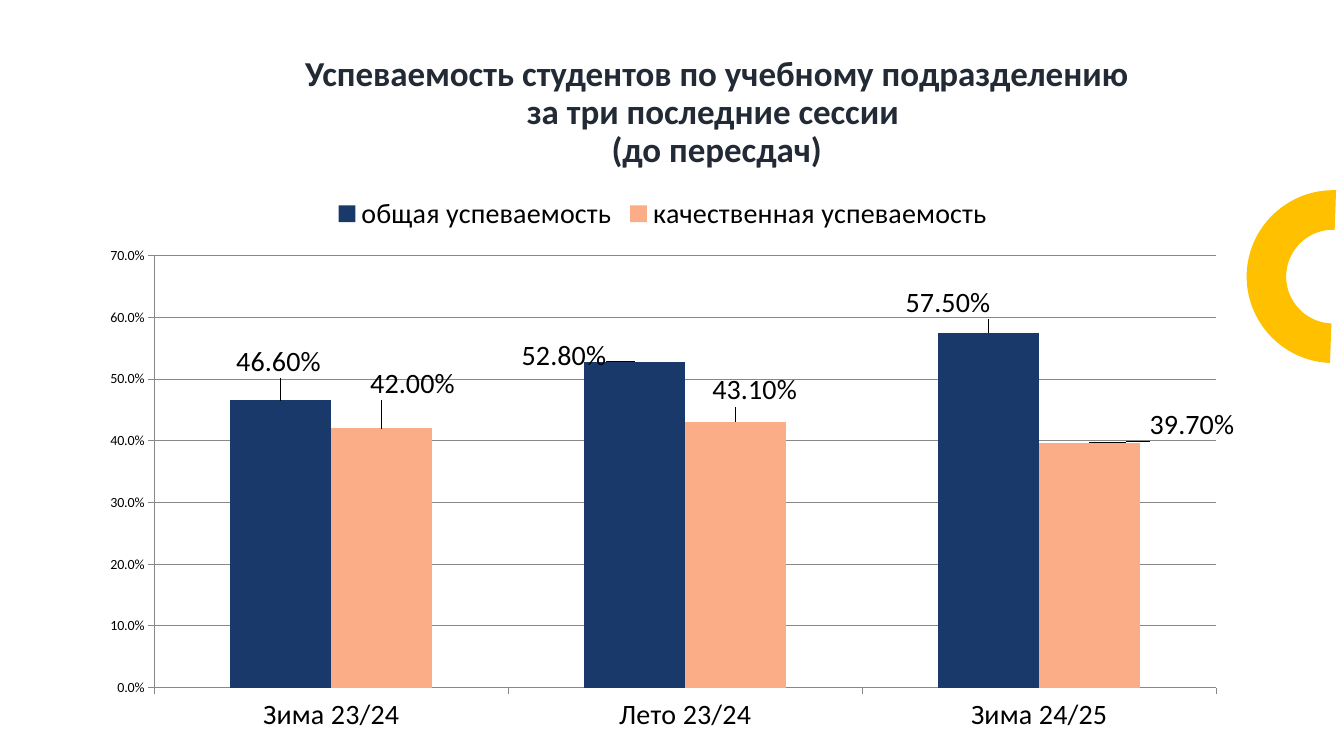
from math import cos, radians, sin

from pptx import Presentation
from pptx.chart.data import CategoryChartData
from pptx.dml.color import RGBColor
from pptx.enum.chart import XL_CHART_TYPE as ChartType
from pptx.enum.chart import XL_LABEL_POSITION as LabelPosition
from pptx.enum.chart import XL_LEGEND_POSITION as LegendPosition
from pptx.enum.chart import XL_TICK_MARK as TickMark
from pptx.enum.text import MSO_ANCHOR as Anchor
from pptx.enum.text import MSO_AUTO_SIZE as AutoSize
from pptx.enum.text import PP_ALIGN as Align
from pptx.oxml import parse_xml
from pptx.oxml.ns import nsdecls, qn
from pptx.util import Pt

FONT = "Calibri"
COLORS = {
    "title": "222A35",
    "text": "000000",
    "axis": "888888",
    "arc": "FFC000",
    "overall": "1A396B",
    "quality": "FBAD87",
}
TITLE = "Успеваемость студентов по учебному подразделению\vза три последние сессии \v(до пересдач)"
SESSIONS = ["Зима 23/24", "Лето 23/24", "Зима 24/25"]
# Name, colour, values, and label shifts in points
SERIES = [
    ("общая успеваемость", "overall", [0.466, 0.528, 0.575],
     [(-1.5, -12.5), (-50.5, 10.5), (-29, -6.5)]),
    ("качественная успеваемость", "quality", [0.42, 0.431, 0.397],
     [(22, -17), (13.5, -7.5), (73, 2)]),
]
CHART_WIDTH, CHART_HEIGHT = 823, 399.6
LEADER_LINES_OFF = (
    f'<c:extLst {nsdecls("c")}><c:ext uri="{{CE6537A1-D6FC-4f65-9D91-7224C49458BB}}"'
    ' xmlns:c15="http://schemas.microsoft.com/office/drawing/2012/chart">'
    '<c15:showLeaderLines val="0"/></c:ext></c:extLst>'
)


def rgb(name):
    return RGBColor.from_string(COLORS[name])


def style_font(font, size, color="text", bold=False):
    font.name = FONT
    font.size = Pt(size)
    font.bold = bold
    font.color.rgb = rgb(color)


def set_title(slide):
    title = slide.shapes.title
    title.left, title.top, title.width, title.height = Pt(53.3), Pt(0), Pt(917.3), Pt(162)
    frame = title.text_frame
    frame.text = TITLE
    frame.word_wrap = True
    frame.auto_size = AutoSize.NONE
    frame.vertical_anchor = Anchor.MIDDLE
    paragraph = frame.paragraphs[0]
    paragraph.alignment = Align.CENTER
    paragraph.line_spacing = 0.9
    for run in paragraph.runs:
        style_font(run.font, 25, "title", bold=True)


def quarter_curve(radius, start, turn):
    """Return the two control points and the end of a quarter circle."""
    u, v = [(cos(radians(a)), -sin(radians(a))) for a in (start, start + turn)]
    weights = [(1, 0.55), (0.55, 1), (0, 1)]
    return [tuple(radius * (p * s + q * t) for s, t in zip(u, v)) for p, q in weights]


def add_half_ring(slide, center_x, center_y, outer, inner, start):
    """Draw half a ring, counter-clockwise from the start angle in degrees."""
    end = start + 180
    corners = [(r * cos(radians(a)), -r * sin(radians(a))) for r, a in ((outer, start), (inner, end))]
    offsets = [
        corners[0], *quarter_curve(outer, start, 90), *quarter_curve(outer, start + 90, 90),
        corners[1], *quarter_curve(inner, end, -90), *quarter_curve(inner, end - 90, -90),
    ]
    points = [(100 * (center_x + x), 100 * (center_y + y)) for x, y in offsets]
    builder = slide.shapes.build_freeform(*points[0], scale=Pt(0.01))
    builder.add_line_segments(points[1:], close=True)
    shape = builder.convert_to_shape()
    segments = shape.element.findall(".//" + qn("a:lnTo"))
    for first in (0, 3, 7, 10):
        curve, *others = segments[first:first + 3]
        for other in others:
            curve.append(other[0])
            other.getparent().remove(other)
        curve.tag = qn("a:cubicBezTo")
    shape.shadow.inherit = False
    shape.fill.solid()
    shape.fill.fore_color.rgb = rgb("arc")
    shape.line.fill.background()


def manual_layout(x, y, size=None):
    """Return a c:layout element from points; a size makes it an inner plot area."""
    parts = [("x", x / CHART_WIDTH), ("y", y / CHART_HEIGHT)]
    if size:
        parts = [("layoutTarget", "inner"), ("xMode", "edge"), ("yMode", "edge"),
                 *parts, ("w", size[0] / CHART_WIDTH), ("h", size[1] / CHART_HEIGHT)]
    body = "".join(f'<c:{tag} val="{value}"/>' for tag, value in parts)
    return parse_xml(
        f'<c:layout {nsdecls("c")}><c:manualLayout>{body}</c:manualLayout></c:layout>'
    )


def style_axis(axis, size):
    style_font(axis.tick_labels.font, size)
    axis.major_tick_mark = TickMark.OUTSIDE
    axis.minor_tick_mark = TickMark.NONE
    style_line(axis.format.line)


def style_line(line):
    line.color.rgb = rgb("axis")
    line.width = Pt(0.75)


def style_series(series, color, shifts):
    series.format.fill.solid()
    series.format.fill.fore_color.rgb = rgb(color)
    labels = series.data_labels
    labels.show_value = True
    labels.number_format = "0.00%"
    labels.number_format_is_linked = False
    labels.position = LabelPosition.OUTSIDE_END
    style_font(labels.font, 20)
    for index in range(len(shifts)):
        label = series.points[index].data_label
        label.position = LabelPosition.OUTSIDE_END
        style_font(label.font, 20)


def place_labels(chart):
    all_shifts = [shift for *_, shifts in SERIES for shift in shifts]
    for label, shift in zip(chart.element.xpath(".//c:dLbl"), all_shifts):
        label.insert(1, manual_layout(*shift))
    for labels in chart.element.xpath(".//c:ser/c:dLbls"):
        for leader_lines in labels.xpath("./c:showLeaderLines"):
            labels.remove(leader_lines)
        labels.append(parse_xml(LEADER_LINES_OFF))


def add_results_chart(slide):
    data = CategoryChartData(number_format="0.00%")
    data.categories = SESSIONS
    for name, _, values, _ in SERIES:
        data.add_series(name, values)
    chart = slide.shapes.add_chart(
        ChartType.COLUMN_CLUSTERED, Pt(61.9), Pt(131), Pt(CHART_WIDTH), Pt(CHART_HEIGHT), data
    ).chart
    style_font(chart.font, 10)
    chart.has_title = False
    chart.has_legend = True
    chart.legend.position = LegendPosition.TOP
    chart.legend.include_in_layout = False
    style_font(chart.legend.font, 20)

    style_axis(chart.category_axis, 20)
    value_axis = chart.value_axis
    style_axis(value_axis, 10)
    value_axis.minimum_scale, value_axis.maximum_scale = 0, 0.7
    value_axis.major_unit = 0.1
    value_axis.tick_labels.number_format = "0.0%"
    value_axis.tick_labels.number_format_is_linked = False
    style_line(value_axis.major_gridlines.format.line)

    plot = chart.plots[0]
    plot.gap_width = 150
    plot.overlap = 0
    plot.vary_by_categories = False
    for series, (_, color, _, shifts) in zip(plot.series, SERIES):
        style_series(series, color, shifts)
    place_labels(chart)

    plot_area = chart.element.xpath(".//c:plotArea")[0]
    for layout in plot_area.xpath("./c:layout"):
        plot_area.remove(layout)
    plot_area.insert(0, manual_layout(48.3, 51.7, (758.6, 308.6)))


def main():
    presentation = Presentation()
    presentation.slide_width, presentation.slide_height = Pt(960), Pt(540)
    slide = presentation.slides.add_slide(presentation.slide_layouts[5])
    set_title(slide)
    add_half_ring(slide, center_x=952.2, center_y=197.6, outer=61.7, inner=33.5, start=88)
    add_results_chart(slide)
    presentation.save("out.pptx")


if __name__ == "__main__":
    main()
